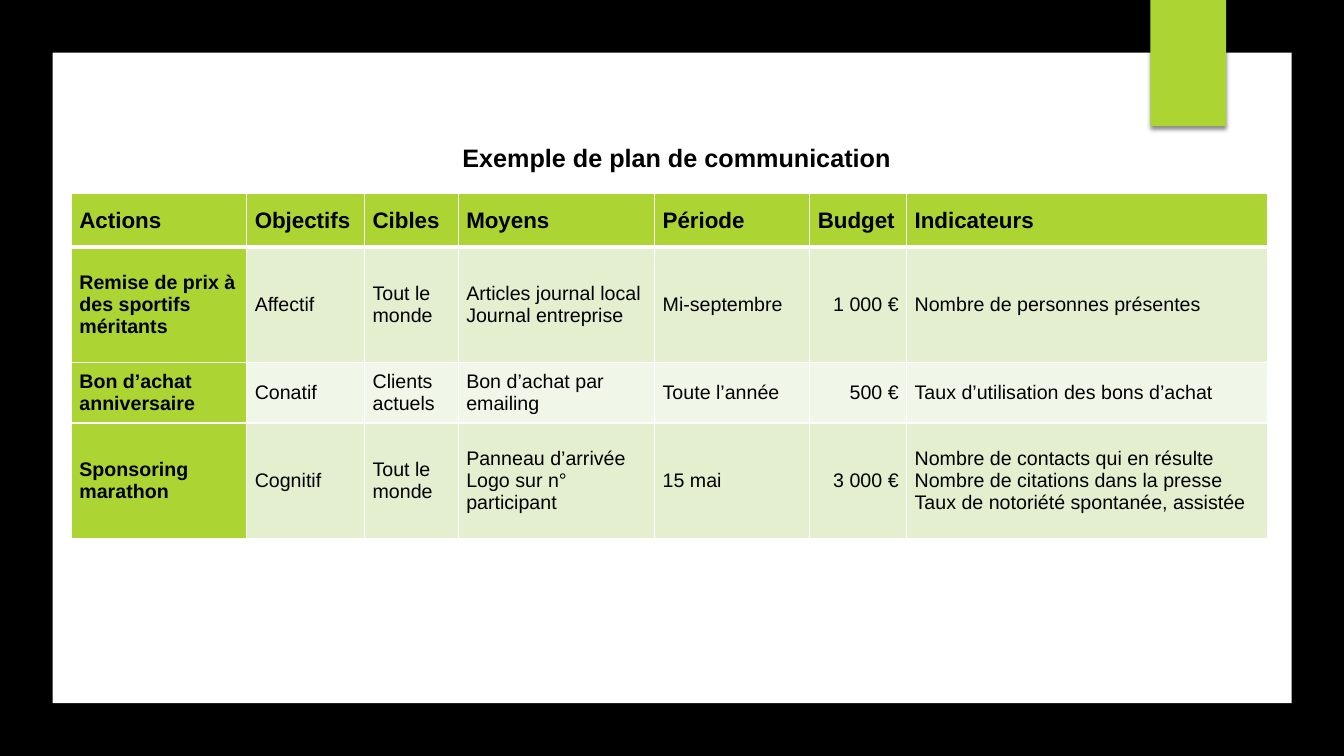
from lxml.etree import SubElement
from pptx import Presentation
from pptx.dml.color import RGBColor
from pptx.enum.shapes import MSO_SHAPE
from pptx.enum.text import MSO_ANCHOR, MSO_AUTO_SIZE, PP_ALIGN
from pptx.oxml import parse_xml
from pptx.oxml.ns import nsdecls, qn
from pptx.util import Cm, Pt

GREEN, WHITE, BLACK = "ACD433", "FFFFFF", "000000"
BAND_FILLS = ["E3EFCE", "F1F7E8"]
BUDGET_COLUMN = 5
COLUMN_WIDTHS = [4.42, 2.97, 2.36, 4.95, 3.91, 2.44, 9.1]
ROW_HEIGHTS = [1.35, 2.9, 1.53, 2.9]
PLAN = [
    ["Actions", "Objectifs", "Cibles", "Moyens", "Période", "Budget", "Indicateurs"],
    ["Remise de prix à des sportifs méritants", "Affectif", "Tout le monde",
     "Articles journal local\nJournal entreprise", "Mi-septembre", "1 000 €",
     "Nombre de personnes présentes"],
    ["Bon d’achat anniversaire", "Conatif", "Clients actuels",
     "Bon d’achat par emailing", "Toute l’année", "500 €",
     "Taux d’utilisation des bons d’achat"],
    ["Sponsoring marathon", "Cognitif", "Tout le monde",
     "Panneau d’arrivée\nLogo sur n° participant", "15 mai", "3 000 €",
     "Nombre de contacts qui en résulte\nNombre de citations dans la presse\n"
     "Taux de notoriété spontanée, assistée"],
]


def paint(fill, color):
    fill.solid()
    fill.fore_color.rgb = RGBColor.from_string(color)


def format_text(paragraph, size, bold, alignment):
    paragraph.alignment = alignment
    for span in paragraph.runs:
        span.font.name = "Arial"
        span.font.size = Pt(size)
        span.font.bold = bold
        span.font.color.rgb = RGBColor.from_string(BLACK)


deck = Presentation()
deck.slide_width, deck.slide_height = Cm(33.87), Cm(19.05)
page = deck.slides.add_slide(deck.slide_layouts[5])
paint(page.background.fill, BLACK)

# White panel and green ribbon
for left, top, width, height, color in [
    (1.33, 1.33, 31.22, 16.39, WHITE),
    (28.99, 0, 1.91, 3.18, GREEN),
]:
    panel = page.shapes.add_shape(
        MSO_SHAPE.RECTANGLE, Cm(left), Cm(top), Cm(width), Cm(height))
    panel.shadow.inherit = False
    panel.line.fill.background()
    paint(panel.fill, color)
ribbon = panel
effects = ribbon.element.spPr.find(qn("a:effectLst"))
effects.append(parse_xml(
    f'<a:outerShdw {nsdecls("a")} blurRad="{Pt(3)}" dist="{Pt(2)}" dir="5400000" '
    f'rotWithShape="0"><a:srgbClr val="{BLACK}"><a:alpha val="45000"/></a:srgbClr>'
    '</a:outerShdw>'))

# Communication plan
table = page.shapes.add_table(
    len(ROW_HEIGHTS), len(COLUMN_WIDTHS), Cm(1.8), Cm(4.88),
    Cm(sum(COLUMN_WIDTHS)), Cm(sum(ROW_HEIGHTS))).table
for column, width in zip(table.columns, COLUMN_WIDTHS):
    column.width = Cm(width)
for row, height in zip(table.rows, ROW_HEIGHTS):
    row.height = Cm(height)

for row_number, texts in enumerate(PLAN):
    for column_number, text in enumerate(texts):
        is_header = row_number == 0
        is_label = is_header or column_number == 0
        cell = table.cell(row_number, column_number)
        cell.margin_left = cell.margin_right = Cm(0.2)
        cell.margin_top = cell.margin_bottom = 0
        cell.vertical_anchor = MSO_ANCHOR.MIDDLE

        borders = {"lnL": 1, "lnR": 1, "lnT": 3 if row_number == 1 else 1,
                   "lnB": 3 if is_header else 1}
        properties = cell._tc.get_or_add_tcPr()
        for side, points in borders.items():
            line = SubElement(properties, qn(f"a:{side}"), w=str(Pt(points)))
            line_fill = SubElement(line, qn("a:solidFill"))
            SubElement(line_fill, qn("a:srgbClr"), val=WHITE)
        paint(cell.fill, GREEN if is_label else BAND_FILLS[(row_number - 1) % 2])

        cell.text_frame.text = text
        is_amount = column_number == BUDGET_COLUMN and not is_header
        for paragraph in cell.text_frame.paragraphs:
            format_text(paragraph, 16 if is_header else 14, is_label,
                        PP_ALIGN.RIGHT if is_amount else PP_ALIGN.LEFT)

# Title, brought in front of the white panel
title = page.shapes.title
title.left, title.top, title.width, title.height = Cm(11.35), Cm(3.45), Cm(11.4), Cm(1.02)
frame = title.text_frame
frame.text = "Exemple de plan de communication"
frame.word_wrap = False
frame.auto_size = MSO_AUTO_SIZE.NONE
frame.vertical_anchor = MSO_ANCHOR.MIDDLE
format_text(frame.paragraphs[0], 18, True, PP_ALIGN.CENTER)
title.element.getparent().append(title.element)

deck.save("out.pptx")
